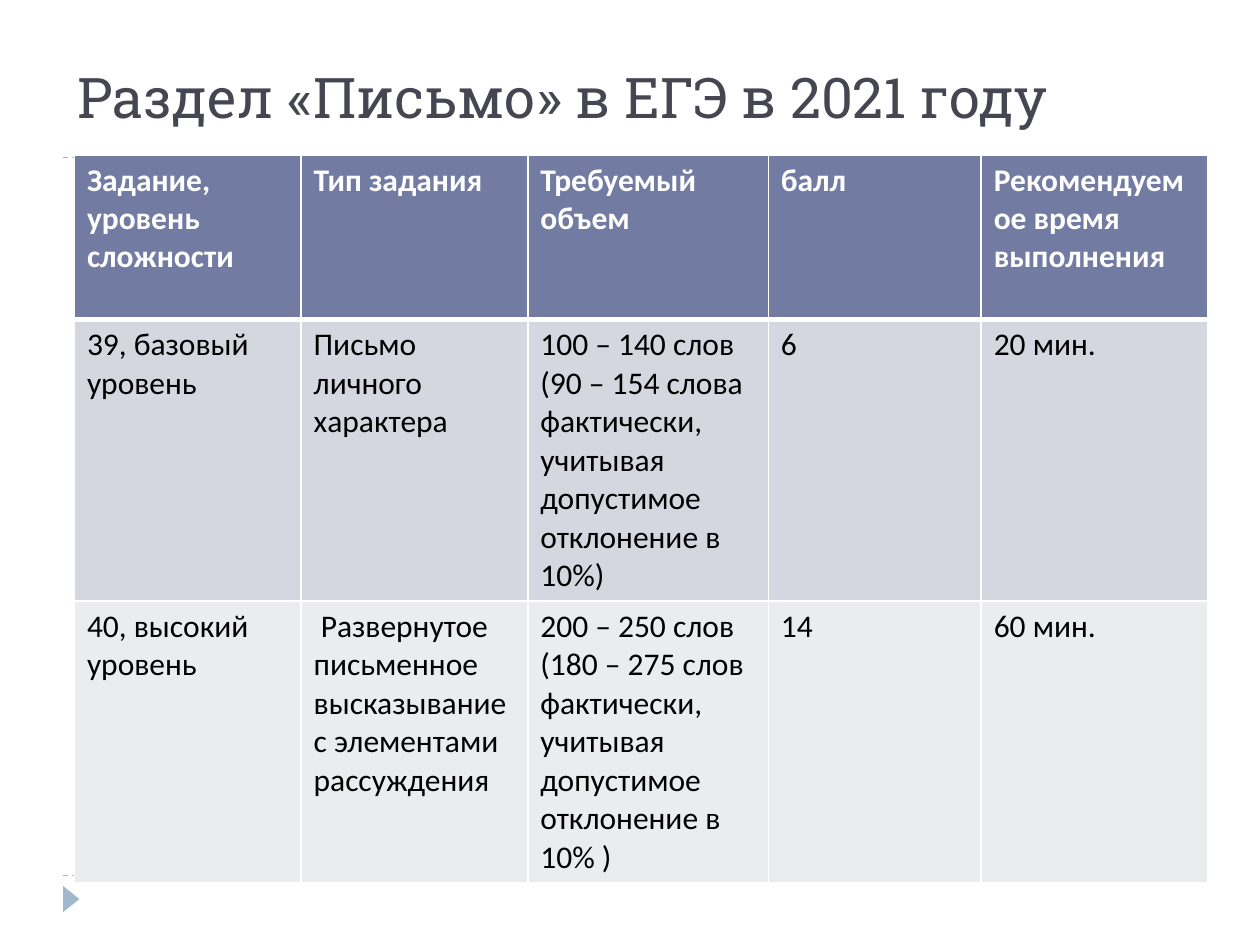
from lxml.etree import SubElement
from pptx import Presentation
from pptx.dml.color import RGBColor
from pptx.enum.dml import MSO_LINE
from pptx.enum.shapes import MSO_CONNECTOR, MSO_SHAPE
from pptx.enum.text import MSO_ANCHOR, MSO_AUTO_SIZE, PP_ALIGN
from pptx.oxml.ns import qn
from pptx.util import Cm, Pt

WHITE = RGBColor(0xFF, 0xFF, 0xFF)
BLACK = RGBColor(0, 0, 0)
TITLE_GREY = RGBColor(0x46, 0x46, 0x53)
PALE_BLUE = RGBColor(0x9F, 0xB8, 0xCD)
HEADER_BLUE = RGBColor(0x72, 0x7C, 0xA3)
BAND_DARK = RGBColor(0xD5, 0xD7, 0xE0)
BAND_LIGHT = RGBColor(0xEB, 0xEC, 0xF0)

COLUMN_WIDTHS = [4.57, 4.57, 4.85, 4.29, 4.57]
ROW_HEIGHTS = [3.32, 5.68, 5.68]
ROW_FILLS = [HEADER_BLUE, BAND_DARK, BAND_LIGHT]
TASKS = [
    ["Задание, уровень сложности", "Тип задания", "Требуемый объем", "балл",
     "Рекомендуемое время выполнения"],
    ["39, базовый уровень", "Письмо личного характера",
     "100 – 140 слов\n(90 – 154 слова фактически, учитывая допустимое "
     "отклонение в 10%)", "6", "20 мин."],
    ["40, высокий уровень",
     " Развернутое письменное высказывание с элементами рассуждения",
     "200 – 250 слов\n(180 – 275 слов фактически, учитывая допустимое "
     "отклонение в 10% )", "14", "60 мин."],
]


def write_text(frame, text, *, size, font="Calibri", color=BLACK, bold=False):
    frame.text = text
    for paragraph in frame.paragraphs:
        paragraph.alignment = PP_ALIGN.LEFT
        for run in paragraph.runs:
            run.font.size = Pt(size)
            run.font.name = font
            run.font.color.rgb = color
            run.font.bold = bold


def add_dashed_rule(slide, y):
    rule = slide.shapes.add_connector(
        MSO_CONNECTOR.STRAIGHT, Cm(1.27), Cm(y), Cm(24.13), Cm(y))
    rule.line.color.rgb = PALE_BLUE
    rule.line.width = Pt(0.75)
    rule.line.dash_style = MSO_LINE.DASH
    SubElement(rule._element.spPr, qn("a:effectLst"))


def add_corner_marker(slide):
    marker = slide.shapes.add_shape(
        MSO_SHAPE.ISOSCELES_TRIANGLE, Cm(1.17), Cm(17.96), Cm(0.53), Cm(0.33))
    marker.rotation = 90
    marker.shadow.inherit = False
    marker.fill.solid()
    marker.fill.fore_color.rgb = PALE_BLUE
    marker.line.fill.background()


def set_title(slide, text):
    title = slide.shapes.title
    title.left, title.top, title.width, title.height = (
        Cm(1.3), Cm(0), Cm(22.86), Cm(2.74))
    title.text_frame.auto_size = MSO_AUTO_SIZE.NONE
    title.text_frame.vertical_anchor = MSO_ANCHOR.BOTTOM
    write_text(title.text_frame, text, size=32, font="Roboto Slab",
               color=TITLE_GREY)


def set_borders(cell, **widths):
    """Draw white borders; widths in points are keyed by side: L, R, T, B."""
    properties = cell._tc.get_or_add_tcPr()
    for side, width in widths.items():
        border = SubElement(properties, qn(f"a:ln{side}"), w=str(Pt(width)))
        fill = SubElement(border, qn("a:solidFill"))
        SubElement(fill, qn("a:srgbClr"), val=str(WHITE))


def add_task_table(slide):
    table = slide.shapes.add_table(
        len(TASKS), len(COLUMN_WIDTHS), Cm(1.5), Cm(3.12),
        Cm(sum(COLUMN_WIDTHS)), Cm(sum(ROW_HEIGHTS))).table
    for column, width in zip(table.columns, COLUMN_WIDTHS):
        column.width = Cm(width)
    for index, (row, height) in enumerate(zip(table.rows, ROW_HEIGHTS)):
        row.height = Cm(height)
        is_header = index == 0
        for cell, text in zip(row.cells, TASKS[index]):
            write_text(cell.text_frame, text, size=18, bold=is_header,
                       color=WHITE if is_header else BLACK)
            set_borders(cell, L=1, R=1, T=3 if index == 1 else 1,
                        B=3 if is_header else 1)
            cell.fill.solid()
            cell.fill.fore_color.rgb = ROW_FILLS[index]


def main():
    presentation = Presentation()
    presentation.slide_width = Cm(25.4)
    presentation.slide_height = Cm(19.05)
    slide = presentation.slides.add_slide(presentation.slide_layouts[5])
    for y in (17.65, 3.18):
        add_dashed_rule(slide, y)
    add_corner_marker(slide)
    set_title(slide, "Раздел «Письмо» в ЕГЭ в 2021 году")
    add_task_table(slide)
    presentation.save("out.pptx")


if __name__ == "__main__":
    main()
